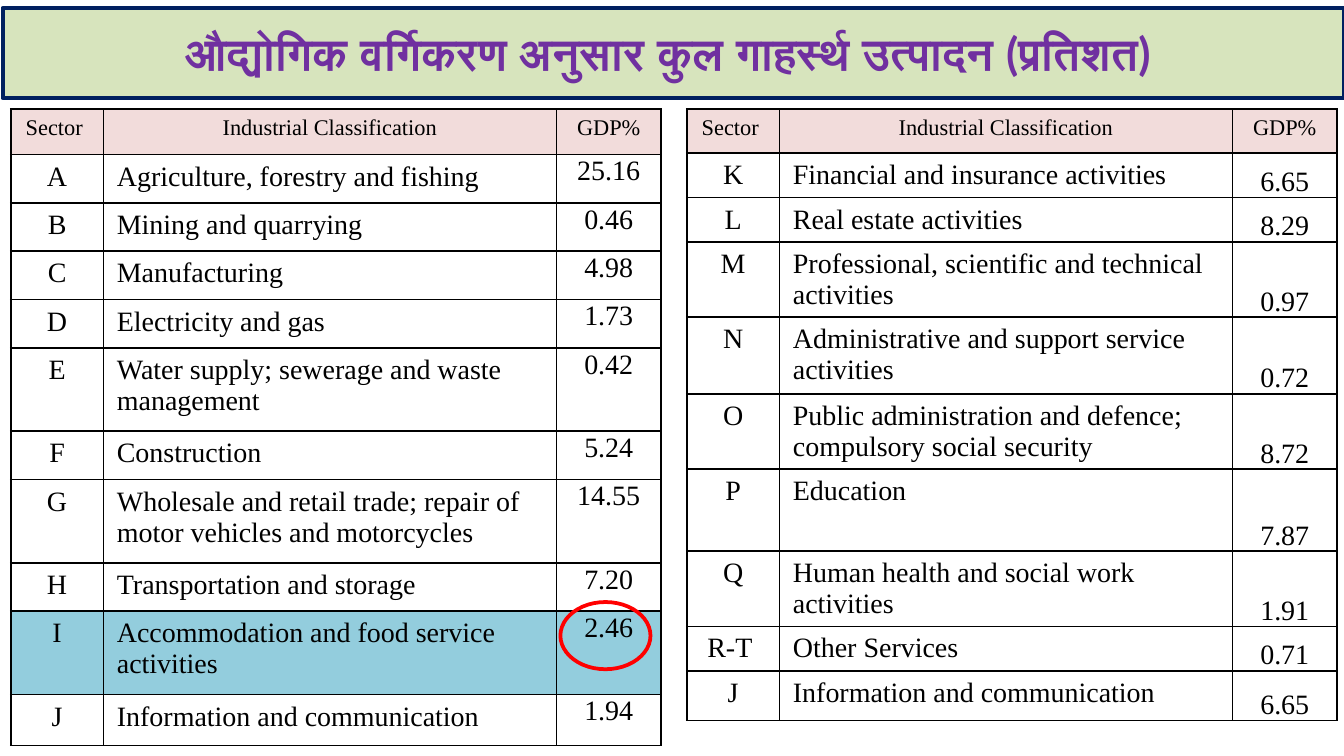
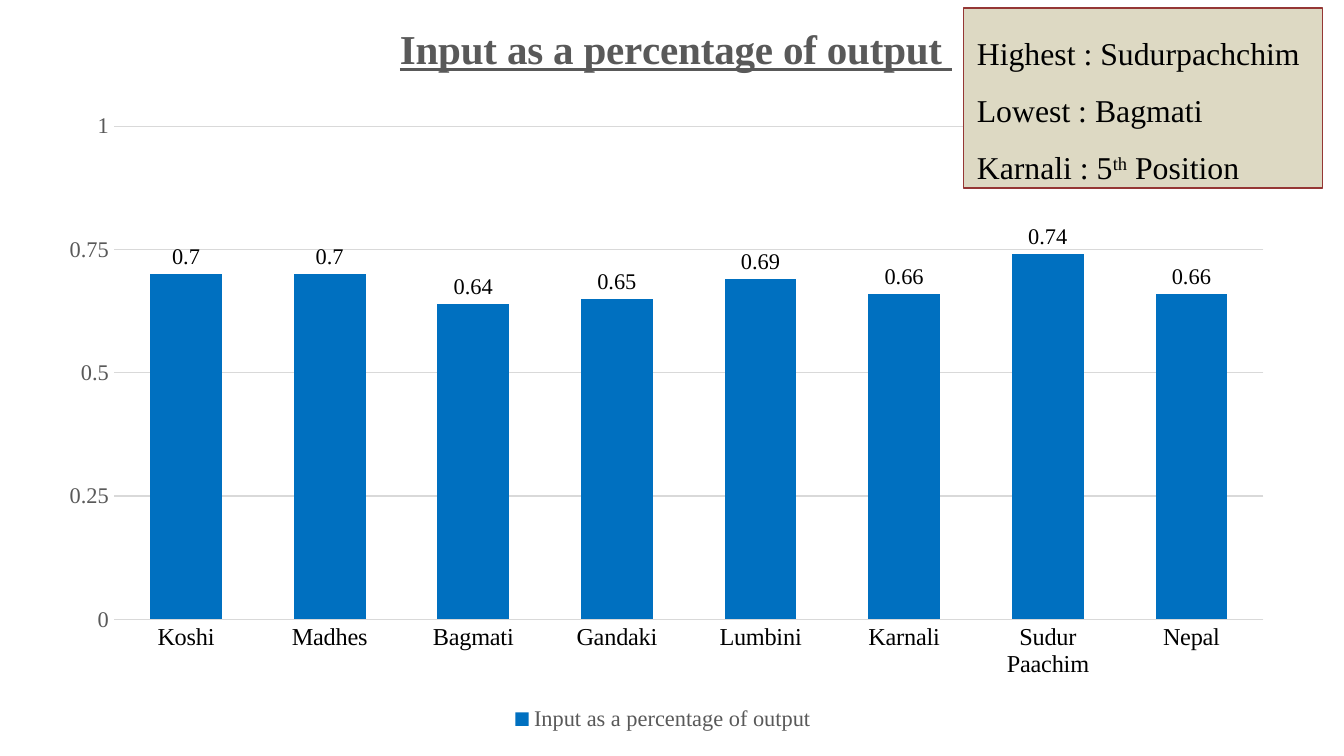
from lxml.etree import SubElement
from pptx import Presentation
from pptx.chart.data import CategoryChartData
from pptx.dml.color import RGBColor
from pptx.enum.chart import XL_CHART_TYPE, XL_LABEL_POSITION, XL_LEGEND_POSITION, XL_TICK_MARK
from pptx.enum.shapes import MSO_SHAPE
from pptx.enum.text import MSO_ANCHOR, MSO_AUTO_SIZE, PP_ALIGN
from pptx.oxml import parse_xml
from pptx.oxml.ns import nsdecls, qn
from pptx.util import Inches, Pt

BLACK = RGBColor(0x00, 0x00, 0x00)
GREY = RGBColor(0x59, 0x59, 0x59)
GRID = RGBColor(0xD9, 0xD9, 0xD9)
NAVY = RGBColor(0x00, 0x20, 0x60)
PURPLE = RGBColor(0x70, 0x30, 0xA0)
GREEN = RGBColor(0xD7, 0xE4, 0xBD)
PINK = RGBColor(0xF2, 0xDC, 0xDB)
AQUA = RGBColor(0x93, 0xCD, 0xDD)
RED = RGBColor(0xFF, 0x00, 0x00)
BLUE = RGBColor(0x00, 0x70, 0xC0)
TAN = RGBColor(0xDD, 0xD9, 0xC3)
MAROON = RGBColor(0x95, 0x37, 0x35)
SERIF = "Times New Roman"

COLUMNS = (0.69, 3.37, 0.78)
HEADER = ("Sector ", "Industrial Classification", "GDP%")
HIGHLIGHT = "Accommodation and food service activities"

# Each row: sector, classification, GDP share, row height
LEFT_ROWS = [
    ("A", "Agriculture, forestry and fishing", "25.16", 0.36),
    ("B", "Mining and quarrying", "0.46", 0.36),
    ("C", "Manufacturing", "4.98", 0.36),
    ("D", "Electricity and gas", "1.73", 0.36),
    ("E", "Water supply; sewerage and waste management", "0.42", 0.62),
    ("F", "Construction", "5.24", 0.36),
    ("G", "Wholesale and retail trade; repair of motor vehicles and motorcycles", "14.55", 0.62),
    ("H", "Transportation and storage", "7.20", 0.36),
    ("I", HIGHLIGHT, "2.46", 0.62),
    ("J", "Information and communication", "1.94", 0.38),
]
RIGHT_ROWS = [
    ("K", "Financial and insurance activities", "6.65", 0.33),
    ("L", "Real estate activities", "8.29", 0.33),
    ("M", "Professional, scientific and technical activities", "0.97", 0.33),
    ("N", "Administrative and support service activities", "0.72", 0.57),
    ("O", "Public administration and defence; compulsory social security", "8.72", 0.33),
    ("P", "Education", "7.87", 0.61),
    ("Q", "Human health and social work activities", "1.91", 0.33),
    ("R-T ", "Other Services", "0.71", 0.33),
    ("J", "Information and communication", "6.65", 0.37),
]
INPUT_SHARE = {
    "Koshi": 0.7, "Madhes": 0.7, "Bagmati": 0.64, "Gandaki": 0.65,
    "Lumbini": 0.69, "Karnali": 0.66, "Sudur Paachim": 0.74, "Nepal": 0.66,
}


def style_font(font, size, color=BLACK, name=SERIF, bold=False, underline=False):
    font.size, font.name, font.bold = Pt(size), name, bold
    font.color.rgb = color
    if underline:
        font.underline = True


def add_text(p, text, align=PP_ALIGN.LEFT, spacing=None, baseline=None, **font):
    """Add one formatted run to a paragraph."""
    p.alignment = align
    if spacing:
        p.line_spacing = spacing
    r = p.add_run()
    r.text = text
    style_font(r.font, **font)
    if baseline:
        r.font._element.set("baseline", str(baseline * 1000))


def add_box(s, kind, box, line, width, fill=None):
    sp = s.shapes.add_shape(kind, *map(Inches, box))
    sp.shadow.inherit = False
    set_fill(sp.fill, fill)
    sp.line.color.rgb = line
    sp.line.width = Pt(width)
    return sp


def set_fill(fill, color):
    if color is None:
        fill.background()
    else:
        fill.solid()
        fill.fore_color.rgb = color


def set_borders(cell):
    tc_pr = cell._tc.get_or_add_tcPr()
    for i, side in enumerate(("lnL", "lnR", "lnT", "lnB")):
        tc_pr.insert(i, parse_xml(
            f'<a:{side} {nsdecls("a")} w="12700"><a:solidFill>'
            f'<a:srgbClr val="{BLACK}"/></a:solidFill></a:{side}>'))


def set_layout(part, chart_size, x, y, w=None, h=None):
    """Place a chart part, in inches from the chart's top left corner."""
    layout = part.find(qn("c:layout"))
    if layout is None:
        layout = parse_xml(f'<c:layout {nsdecls("c")}/>')
        part.insert(1 if part.tag == qn("c:title") else 0, layout)
    manual = SubElement(layout, qn("c:manualLayout"))
    width, height = chart_size
    values = {"xMode": "edge", "yMode": "edge", "x": x / width, "y": y / height}
    if w:
        values = {"layoutTarget": "inner", **values, "w": w / width, "h": h / height}
    for tag, value in values.items():
        SubElement(manual, qn(f"c:{tag}")).set("val", str(value))


def title_band(s, box):
    sp = add_box(s, MSO_SHAPE.RECTANGLE, box, NAVY, 2.25, GREEN)
    tf = sp.text_frame
    tf.word_wrap = True
    tf.vertical_anchor = MSO_ANCHOR.MIDDLE
    add_text(tf.paragraphs[0], "औद्योगिक वर्गिकरण अनुसार कुल गाहर्स्थ उत्पादन (प्रतिशत) ",
             align=PP_ALIGN.CENTER, size=24, color=PURPLE, name="Lato", bold=True)


def gdp_table(s, left, top, header_height, rows, share_anchor):
    heights = [header_height] + [row[3] for row in rows]
    frame = s.shapes.add_table(len(heights), len(COLUMNS), Inches(left), Inches(top),
                               Inches(sum(COLUMNS)), Inches(sum(heights)))
    table = frame.table
    table.first_row = table.horz_banding = False
    for column, width in zip(table.columns, COLUMNS):
        column.width = Inches(width)
    for i, (texts, height) in enumerate(zip([HEADER] + [row[:3] for row in rows], heights)):
        table.rows[i].height = Inches(height)
        fill = PINK if i == 0 else AQUA if texts[1] == HIGHLIGHT else None
        for j, text in enumerate(texts):
            cell = table.cell(i, j)
            set_fill(cell.fill, fill)
            set_borders(cell)
            if i and j == 2:
                cell.margin_left = cell.margin_right = cell.margin_top = Inches(0.01)
                cell.margin_bottom = 0
                cell.vertical_anchor = share_anchor
            add_text(cell.text_frame.paragraphs[0], text,
                     align=PP_ALIGN.LEFT if i and j == 1 else PP_ALIGN.CENTER,
                     size=15 if i else 12)


def input_chart(s, box):
    data = CategoryChartData()
    data.categories = list(INPUT_SHARE)
    data.add_series("Input as a percentage of output ", list(INPUT_SHARE.values()))
    chart = s.shapes.add_chart(XL_CHART_TYPE.COLUMN_CLUSTERED,
                               *map(Inches, box), data).chart
    style_font(chart.font, 10)

    # Title and legend
    chart.has_title = True
    title = chart.chart_title
    add_text(title.text_frame.paragraphs[0], "Input as a percentage of output ",
             align=PP_ALIGN.CENTER, size=22, color=GREY, bold=True, underline=True)
    title.include_in_layout = False
    set_layout(title._element, box[2:], 2.59, 0.06)
    chart.has_legend = True
    chart.legend.position = XL_LEGEND_POSITION.BOTTOM
    chart.legend.include_in_layout = False
    style_font(chart.legend.font, 12, GREY)

    # Axes
    cat, val = chart.category_axis, chart.value_axis
    for axis, size, color in ((cat, 13, BLACK), (val, 12, GREY)):
        axis.major_tick_mark = axis.minor_tick_mark = XL_TICK_MARK.NONE
        style_font(axis.tick_labels.font, size, color)
    val.minimum_scale, val.maximum_scale, val.major_unit = 0, 1, 0.25
    val.format.line.fill.background()
    for line in (cat.format.line, val.major_gridlines.format.line):
        line.color.rgb = GRID
        line.width = Pt(0.75)

    # Columns and their labels
    plot = chart.plots[0]
    plot.gap_width, plot.overlap, plot.vary_by_categories = 100, 77, False
    series = plot.series[0]
    set_fill(series.format.fill, BLUE)
    labels = series.data_labels
    labels.show_value = True
    labels.position = XL_LABEL_POSITION.OUTSIDE_END
    style_font(labels.font, 12)
    set_layout(chart._chartSpace.chart.plotArea, box[2:], 0.52, 0.88, 8.55, 3.67)


def ranking_note(s, box):
    sp = add_box(s, MSO_SHAPE.RECTANGLE, box, MAROON, 0.75, TAN)
    tf = sp.text_frame
    tf.word_wrap = True
    tf.auto_size = MSO_AUTO_SIZE.SHAPE_TO_FIT_TEXT
    tf.vertical_anchor = MSO_ANCHOR.TOP
    lines = [[("Highest : Sudurpachchim", None)], [("Lowest : Bagmati", None)],
             [("Karnali : 5", None), ("th", 30), (" Position", None)]]
    for i, runs in enumerate(lines):
        p = tf.add_paragraph() if i else tf.paragraphs[0]
        for text, baseline in runs:
            add_text(p, text, spacing=1.5, baseline=baseline, size=17)


def gdp_slide(prs):
    s = prs.slides.add_slide(prs.slide_layouts[6])
    title_band(s, (0.02, 0.06, 9.98, 0.67))
    gdp_table(s, 0.08, 0.81, 0.34, LEFT_ROWS, MSO_ANCHOR.TOP)
    gdp_table(s, 5.11, 0.81, 0.33, RIGHT_ROWS, MSO_ANCHOR.BOTTOM)
    # Ring around the highlighted share
    add_box(s, MSO_SHAPE.OVAL, (4.17, 4.48, 0.67, 0.5), RED, 2)


def input_slide(prs):
    s = prs.slides.add_slide(prs.slide_layouts[6])
    input_chart(s, (0.33, 0.06, 9.25, 5.42))
    ranking_note(s, (7.17, 0.06, 2.67, 1.34))


def main():
    prs = Presentation()
    # Widescreen, 16:9
    prs.slide_width = Inches(10)
    prs.slide_height = Inches(10) * 9 // 16
    gdp_slide(prs)
    input_slide(prs)
    prs.save("out.pptx")


if __name__ == "__main__":
    main()
